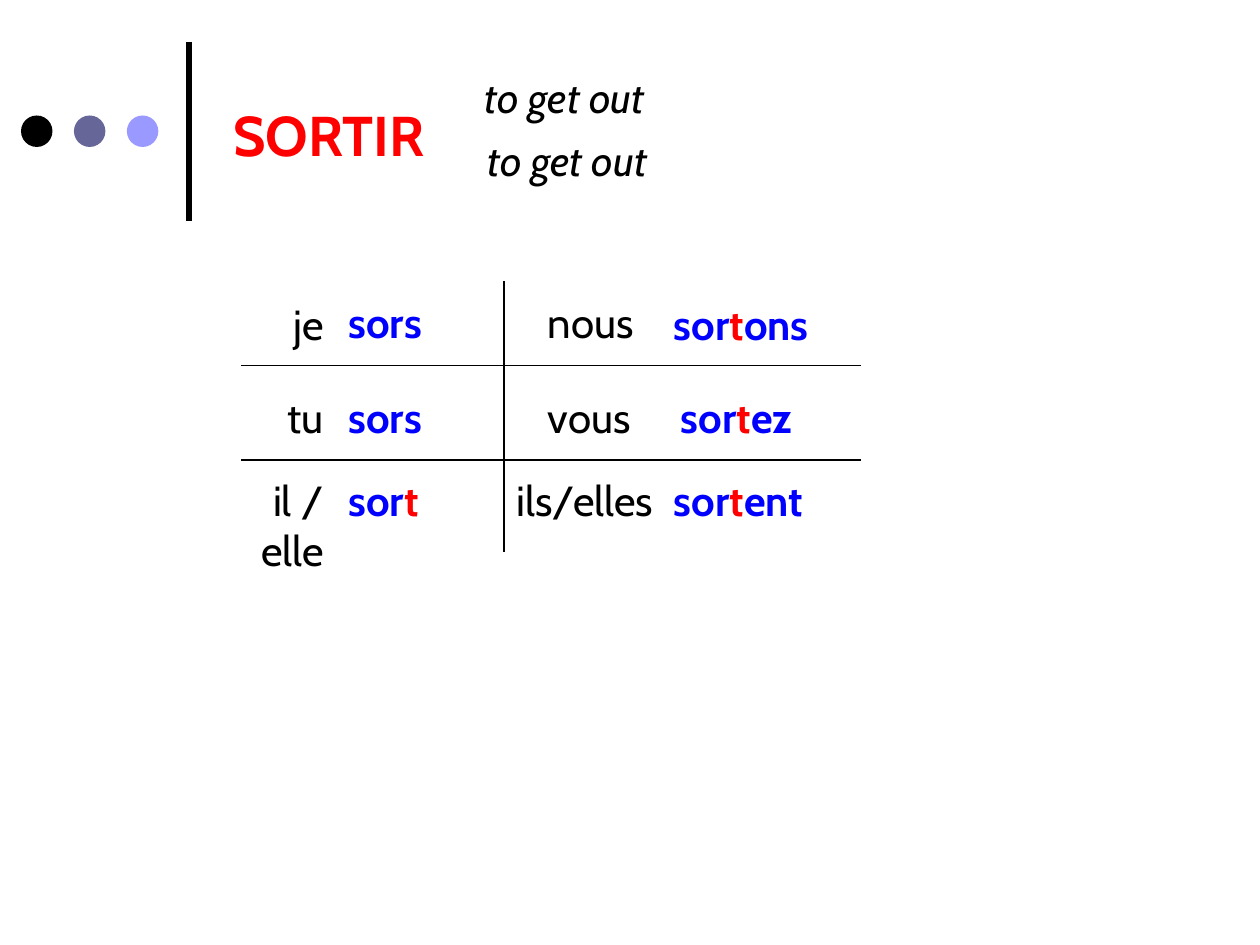
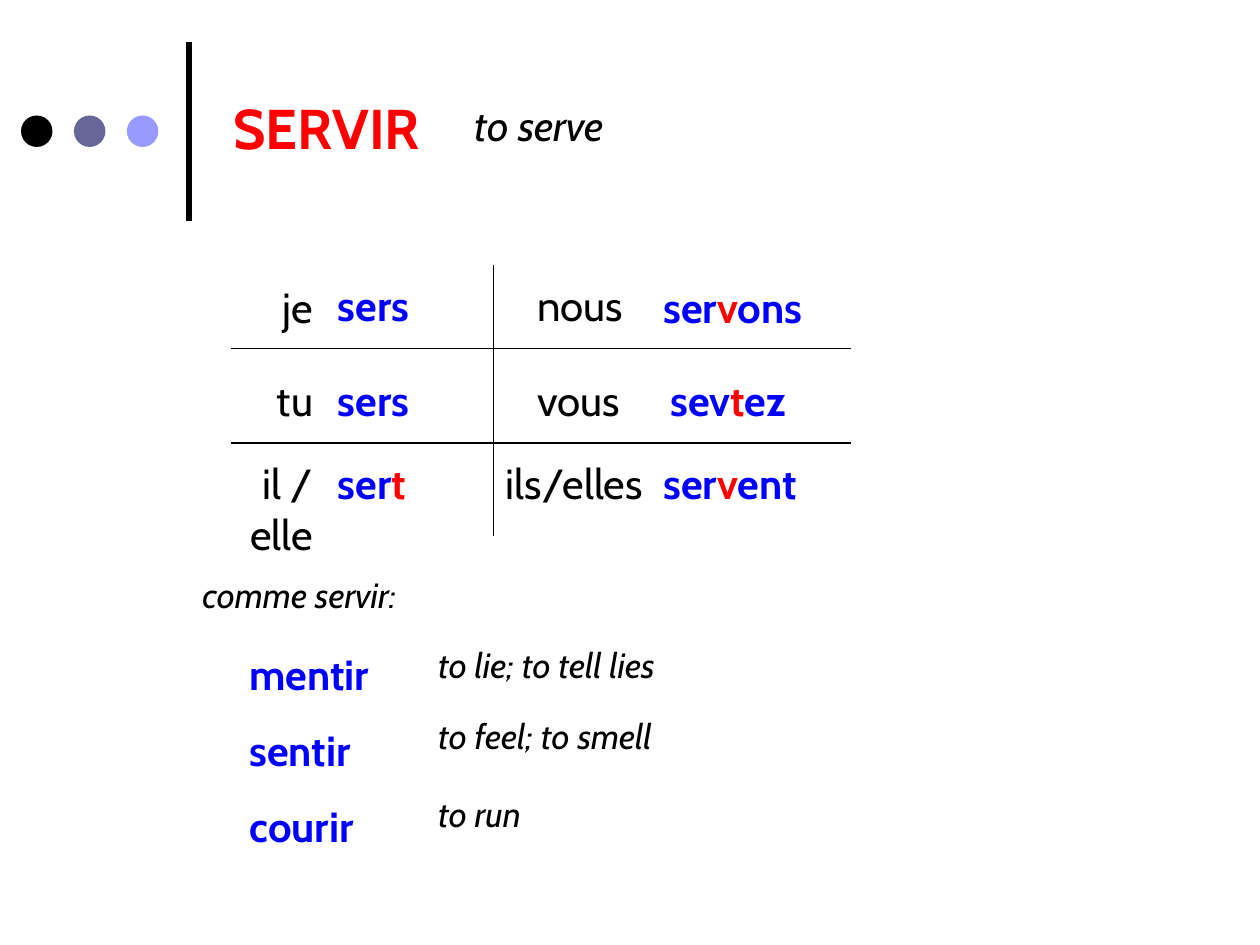
from lxml import etree
from pptx import Presentation
from pptx import util as u
from pptx.dml.color import RGBColor
from pptx.enum import shapes, text
from pptx.oxml.ns import qn

BLACK = RGBColor(0x00, 0x00, 0x00)
SLATE = RGBColor(0x66, 0x66, 0x99)
LILAC = RGBColor(0x99, 0x99, 0xFF)
BLUE = RGBColor(0x00, 0x00, 0xFF)
RED = RGBColor(0xFF, 0x00, 0x00)
FONT = "Cabin"
COLS, ROWS = 120, 90
LEFT, RIGHT = text.PP_ALIGN.LEFT, text.PP_ALIGN.RIGHT


class Deck:
    def __init__(self):
        self.prs = Presentation()
        self.prs.slide_width = u.Inches(10)
        self.prs.slide_height = u.Inches(7.5)
        self.slide = None

    def x(self, cols):
        return u.Emu(round(self.prs.slide_width * cols / COLS))

    def y(self, rows):
        return u.Emu(round(self.prs.slide_height * rows / ROWS))

    def start(self, layout):
        self.slide = self.prs.slides.add_slide(self.prs.slide_layouts[layout])
        self.line(18, 4, 18, 21, 3)
        for i, color in enumerate((BLACK, SLATE, LILAC)):
            self.dot(2 + 5.04 * i, 11, 3, color)

    def line(self, x1, y1, x2, y2, width=0.75):
        line = self.slide.shapes.add_connector(
            shapes.MSO_CONNECTOR.STRAIGHT,
            self.x(x1), self.y(y1), self.x(x2), self.y(y2))
        line.line.color.rgb = BLACK
        line.line.width = u.Pt(width)
        etree.SubElement(line._element.spPr, qn("a:effectLst"))

    def dot(self, x, y, size, color):
        dot = self.slide.shapes.add_shape(
            shapes.MSO_SHAPE.OVAL,
            self.x(x), self.y(y), self.x(size), self.y(size))
        dot.shadow.inherit = False
        dot.fill.solid()
        dot.fill.fore_color.rgb = color
        dot.line.fill.background()

    def place(self, shape, x, y, width, height):
        shape.left, shape.top = self.x(x), self.y(y)
        shape.width, shape.height = self.x(width), self.y(height)

    def style(self, frame, words, size, color, bold=False, italic=False,
              align=LEFT, space=1.0):
        frame.word_wrap = True
        frame.auto_size = text.MSO_AUTO_SIZE.SHAPE_TO_FIT_TEXT
        frame.vertical_anchor = text.MSO_ANCHOR.TOP
        frame.text = words.replace("*", "")
        for para, source in zip(frame.paragraphs, words.split("\n")):
            para.alignment = align
            para.line_spacing = space
            para.space_before = u.Pt(0)
            parts = source.split("*")
            para.runs[0].text = parts[0]
            for part in parts[1:]:
                para.add_run().text = part
            for i, run in enumerate(para.runs):
                run.font.name = FONT
                run.font.size = u.Pt(size)
                run.font.bold = bold
                run.font.italic = italic
                run.font.color.rgb = RED if i % 2 else color

    def label(self, words, x, y, width, size=24, color=BLACK, **looks):
        box = self.slide.shapes.add_textbox(0, 0, 0, 0)
        self.place(box, x, y, width, 0.2 * size + 1.3)
        self.style(box.text_frame, words, size, color, **looks)

    def verb(self, words, x, y, width):
        self.label(words, x, y, width, color=BLUE, bold=True)

    def gloss(self, words, x, y, width, size=24):
        self.label(words, x, y, width, size, italic=True)

    def title(self, words, y):
        shape = self.slide.shapes.title
        self.place(shape, 21, y, 26, 7.7)
        self.style(shape.text_frame, words, 32, RED, bold=True)

    def list(self, words, x, y, width, height):
        shape = self.slide.placeholders[1]
        self.place(shape, x, y, width, height)
        self.style(shape.text_frame, "\n".join(words), 24, BLUE,
                   bold=True, space=1.5)
        for para in shape.text_frame.paragraphs:
            props = para._p.get_or_add_pPr()
            props.set("marL", "0")
            props.set("indent", "0")
            etree.SubElement(props, qn("a:buNone"))

    def forms(self, x, y, single, plural):
        for drop in (8, 17):
            self.line(x, y + drop, x + 59, y + drop)
        self.line(x + 25, y, x + 25, y + 25.8)
        tops = [y + drop for drop in (0.85, 9.85, 17.8)]
        nudge = (0.2, 0, 0)
        for top, low, who, verb in zip(tops, nudge, ("je", "tu", "il / elle"), single):
            self.label(who, x - 4, top + low, 13, align=RIGHT)
            self.verb(verb, x + 9, top, 15)
        people = (("nous", 28, 40), ("vous", 28, 40.67), ("ils/elles", 25, 40))
        for top, low, (who, col, start), verb in zip(tops, nudge, people, plural):
            self.label(who, x + col, top, 16)
            self.verb(verb, x + start, top + low, 25)


def main():
    deck = Deck()

    deck.start(5)
    deck.title("SORTIR", 9)
    deck.gloss("to get out", 45, 6.24, 61)
    deck.gloss("to get out", 45.24, 12.24, 61)
    deck.forms(23, 26.8, ("sors", "sors", "sor*t"),
               ("sor*t*ons", "sor*t*ez", "sor*t*ent"))

    deck.start(1)
    deck.title("SERVIR", 8.3)
    deck.gloss("to serve", 44, 8.9, 25)
    deck.forms(22, 25.2, ("sers", "sers", "ser*t"),
               ("ser*v*ons", "sev*t*ez", "ser*v*ent"))
    deck.gloss("comme servir:", 18.1, 54, 43, 20)
    deck.list(("mentir", "sentir", "courir"), 22.56, 58.8, 43, 22.3)
    for words, row in (("to lie; to tell lies", 60.7),
                       ("to feel; to smell", 67.5), ("to run", 74.9)):
        deck.gloss(words, 40.56, row, 43, 20)

    deck.prs.save("out.pptx")


if __name__ == "__main__":
    main()
